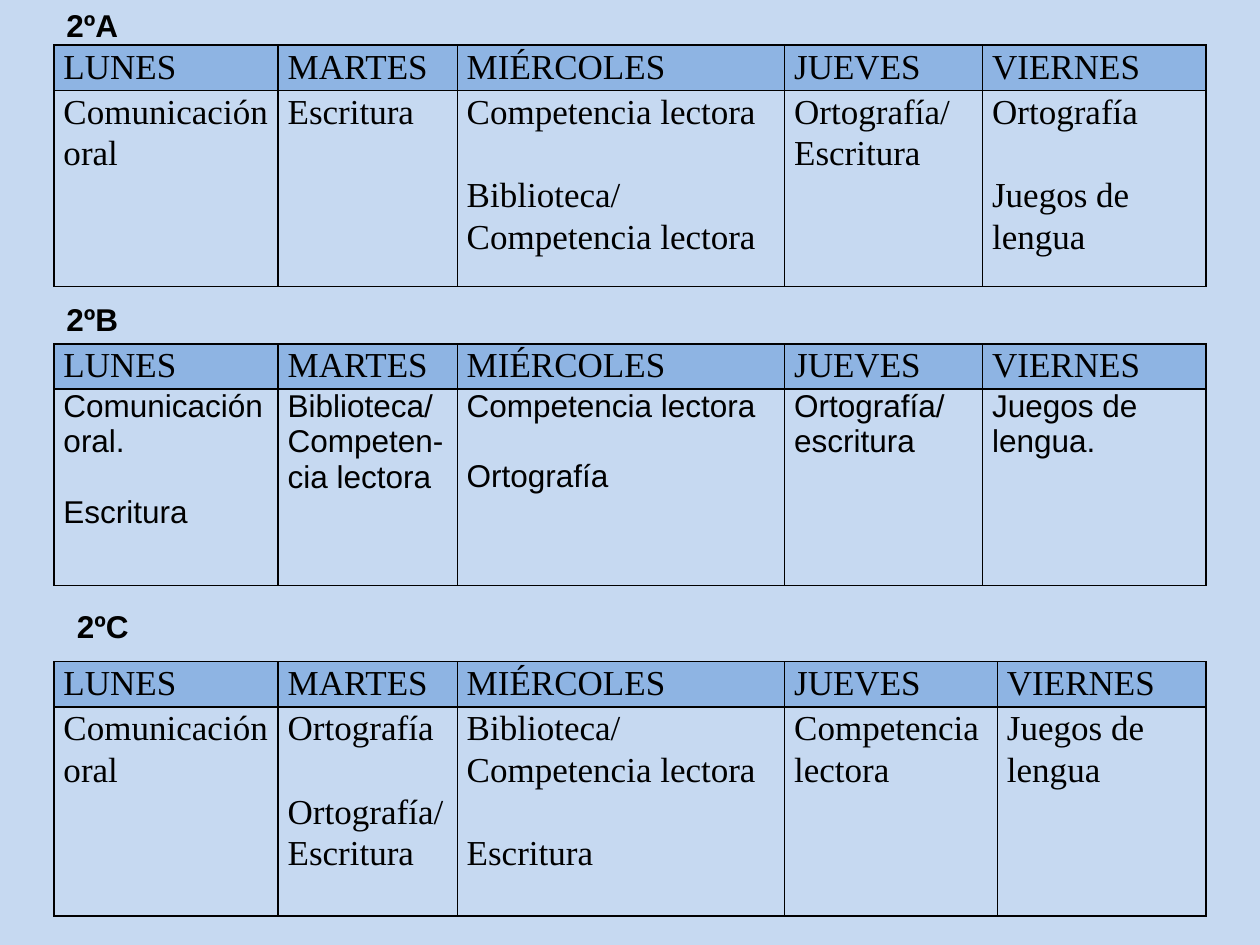
import pptx
import pptx.dml.color
import pptx.oxml
import pptx.oxml.ns
import pptx.util
from pptx.util import Cm

COLORS = {"background": "C6D9F1", "header": "8EB4E3", "ink": "000000"}
DAYS = ["LUNES", "MARTES", "MIÉRCOLES", "JUEVES", "VIERNES"]
SERIF = {"font": "Times New Roman", "size": 20, "line": 1.07, "gap": 24}
SANS = {"font": "Arial", "size": 18, "line": 1.0, "gap": 20}
WIDE_FRIDAY = [4.52, 3.61, 6.6, 3.99, 4.5]
WIDE_THURSDAY = [4.52, 3.61, 6.6, 4.29, 4.2]
LEFT = 1.09
HEADER_HEIGHT = 0.91

CLASSES = [
    {"name": "2ºA", "label": (1.09, 0, 2.79, 1.02), "top": 0.91, "body": 3.96,
     "cols": WIDE_FRIDAY, "style": SERIF,
     "cells": [[["Comunicación oral"]], [["Escritura"]],
               [["Competencia lectora"], ["Biblioteca/ Competencia lectora"]],
               [["Ortografía/ Escritura"]],
               [["Ortografía"], ["Juegos de lengua"]]]},
    {"name": "2ºB", "label": (1.09, 5.92, 1.8, 1.02), "top": 6.93, "body": 3.96,
     "cols": WIDE_FRIDAY, "style": SANS,
     "cells": [[["Comunicación oral."], ["Escritura"]],
               [["Biblioteca/", "Competen-cia lectora"]],
               [["Competencia lectora"], ["Ortografía"]],
               [["Ortografía/", "escritura"]],
               [["Juegos de lengua."]]]},
    {"name": "2ºC", "label": (1.3, 12.12, 1.8, 1.02), "top": 13.34, "body": 4.22,
     "cols": WIDE_THURSDAY, "style": SERIF,
     "cells": [[["Comunicación oral"]],
               [["Ortografía"], ["Ortografía/Escritura"]],
               [["Biblioteca/ Competencia lectora"], ["Escritura"]],
               [["Competencia lectora"]], [["Juegos de lengua"]]]},
]


def rgb(name):
    """Return the named colour."""
    return pptx.dml.color.RGBColor.from_string(COLORS[name])


def add_run(p, text, font, size, bold=False):
    """Add one formatted run to a paragraph."""
    r = p.add_run()
    r.text = text
    r.font.name = font
    r.font.size = pptx.util.Pt(size)
    r.font.bold = bold
    r.font.color.rgb = rgb("ink")


def add_borders(cell):
    """Draw a thin line on all four sides of a cell."""
    tc_pr = cell._tc.get_or_add_tcPr()
    for i, side in enumerate("LRTB"):
        ln = pptx.oxml.parse_xml(
            f'<a:ln{side} {pptx.oxml.ns.nsdecls("a")} w="12700"><a:solidFill>'
            f'<a:srgbClr val="{COLORS["ink"]}"/></a:solidFill></a:ln{side}>')
        tc_pr.insert(i, ln)


def fill_cell(cell, groups, style, header=False):
    """Write groups of paragraphs, set apart by a gap, into a cell."""
    cell.margin_left = cell.margin_right = Cm(0.19)
    cell.margin_top = cell.margin_bottom = 0
    if header:
        cell.fill.solid()
        cell.fill.fore_color.rgb = rgb("header")
    else:
        cell.fill.background()
    add_borders(cell)
    tf = cell.text_frame
    for i, group in enumerate(groups):
        for j, text in enumerate(group):
            p = tf.paragraphs[0] if i == j == 0 else tf.add_paragraph()
            p.line_spacing = style["line"]
            if i and j == 0:
                p.space_before = pptx.util.Pt(style["gap"])
            add_run(p, text, style["font"], style["size"])


def add_label(s, name, box):
    """Place the class name in the given box."""
    tf = s.shapes.add_textbox(*map(Cm, box)).text_frame
    tf.word_wrap = True
    add_run(tf.paragraphs[0], name, "Arial", 18, bold=True)


def add_timetable(s, left, top, cols, body, cells, style):
    """Place a weekly table with a header row and one body row."""
    rows = [HEADER_HEIGHT, body]
    sp = s.shapes.add_table(2, len(cols), Cm(left), Cm(top),
                            Cm(sum(cols)), Cm(sum(rows)))
    table = sp.table
    table.first_row = table.horz_banding = False
    for row, height in zip(table.rows, rows):
        row.height = Cm(height)
    for i, (width, day, groups) in enumerate(zip(cols, DAYS, cells)):
        table.columns[i].width = Cm(width)
        fill_cell(table.cell(0, i), [[day]], SERIF, header=True)
        fill_cell(table.cell(1, i), groups, style)


def main():
    """Build the slide with one timetable per class."""
    prs = pptx.Presentation()
    prs.slide_width, prs.slide_height = Cm(25.4), Cm(19.05)
    s = prs.slides.add_slide(prs.slide_layouts[6])
    s.background.fill.solid()
    s.background.fill.fore_color.rgb = rgb("background")
    for c in CLASSES:
        add_timetable(s, LEFT, c["top"], c["cols"], c["body"], c["cells"], c["style"])
        add_label(s, c["name"], c["label"])
    prs.save("out.pptx")


if __name__ == "__main__":
    main()
